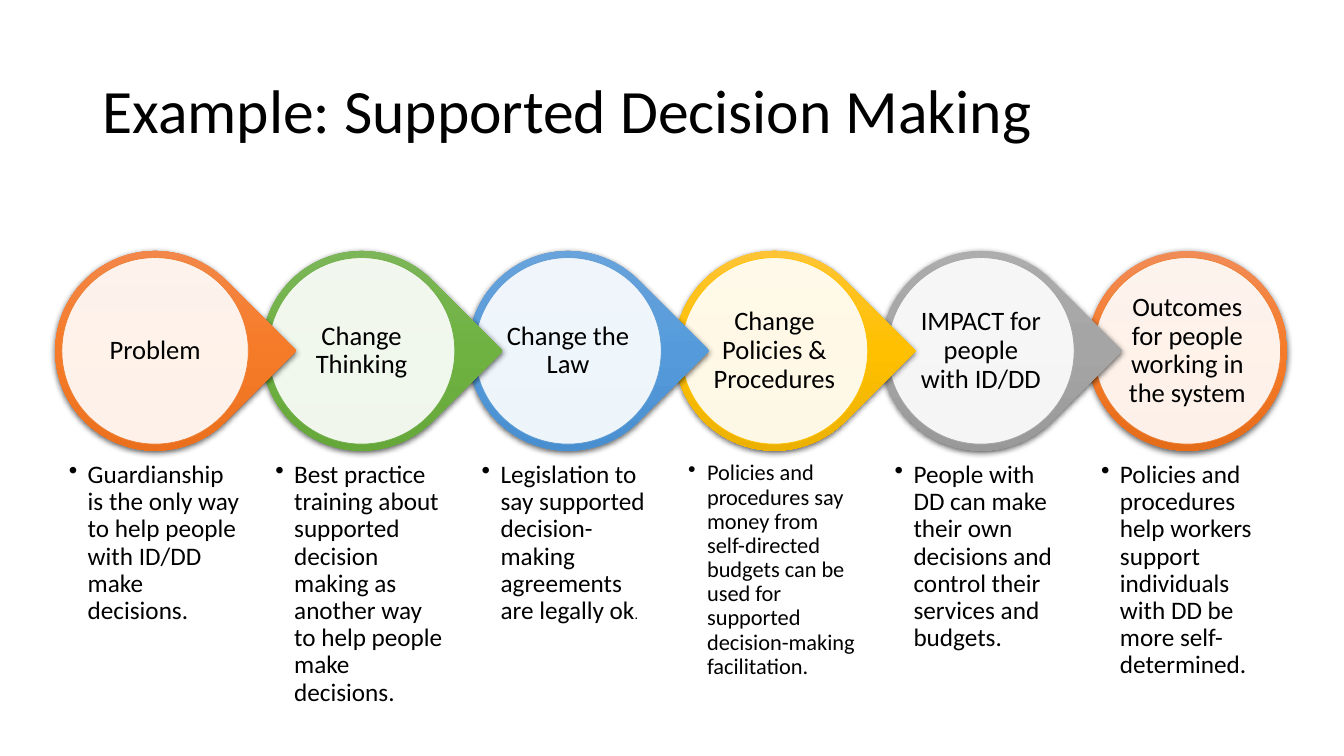
from pptx import Presentation
from pptx.dml.color import RGBColor
from pptx.enum.shapes import MSO_SHAPE
from pptx.enum.text import MSO_ANCHOR, PP_ALIGN
from pptx.oxml import parse_xml
from pptx.oxml.ns import nsdecls
from pptx.util import Pt

TITLE = "Example: Supported Decision Making"

ORANGE = ("ED7D31", ("F18C57", "F67B28", "E56C19"))
GREEN = ("70AD47", ("81B861", "6FB242", "62A336"))
BLUE = ("5B9BD5", ("71A6DB", "559BDB", "448ACA"))
GOLD = ("FFC000", ("FFC64B", "FFC000", "E3AB00"))
GRAY = ("A5A5A5", ("AFAFAF", "A5A5A5", "939393"))

# heading, colours, runs of the explanation as (text, size)
STAGES = [
    ("Problem", ORANGE,
     [("Guardianship is the only way to help people with ID/DD make decisions.", 18)]),
    ("Change Thinking", GREEN,
     [("Best practice training about supported decision making as another way "
       "to help people make decisions.", 18)]),
    ("Change the Law", BLUE,
     [("Legislation to say supported decision-making agreements are legally ok", 18),
      (".", 10)]),
    ("Change Policies & Procedures", GOLD,
     [("Policies and procedures say money from self-directed budgets can be used "
       "for supported decision-making facilitation.", 16)]),
    ("IMPACT for people with ID/DD", GRAY,
     [("People with DD can make their own decisions and control their services "
       "and budgets.", 18)]),
    ("Outcomes for people working in the system", ORANGE,
     [("Policies and procedures help workers support individuals with DD be more "
       "self-determined.", 18)]),
]

FIRST_CENTER, STEP = 110.8, 147.46
CENTER_Y = 250.6
DROP, CIRCLE = 142.6, 133.2
NOTE_TOP, NOTE_HEIGHT = 324.7, 78.5


def color(hex_string):
    return RGBColor.from_string(hex_string)


def set_frame(frame, inset, **formats):
    for side in ("left", "top", "right", "bottom"):
        setattr(frame, f"margin_{side}", Pt(inset))
    for name, value in {"word_wrap": True, **formats}.items():
        setattr(frame, name, value)


def write(paragraph, runs, align):
    paragraph.alignment = align
    paragraph.line_spacing = 0.9
    for text, size in runs:
        run = paragraph.add_run()
        run.text = text
        for name, value in {"name": "Calibri", "size": Pt(size)}.items():
            setattr(run.font, name, value)
        run.font.color.rgb = color("000000")


def add_round(kind, center, size):
    return slide.shapes.add_shape(
        kind, Pt(center - size / 2), Pt(CENTER_Y - size / 2), Pt(size), Pt(size))


def add_drop(center, shades, is_last):
    """Shaded backing whose tip points at the next stage; the last has no tip."""
    drop = add_round(MSO_SHAPE.OVAL if is_last else MSO_SHAPE.TEAR, center, DROP)
    drop.rotation = 0 if is_last else 45
    drop.line.fill.background()
    stops = "".join(
        f'<a:gs pos="{i * 50000}"><a:srgbClr val="{shade}"/></a:gs>'
        for i, shade in enumerate(shades))
    properties = drop._element.spPr
    properties.prstGeom.addnext(parse_xml(
        f'<a:gradFill {nsdecls("a")} rotWithShape="0"><a:gsLst>{stops}</a:gsLst>'
        '<a:lin ang="5400000" scaled="0"/></a:gradFill>'))
    properties.append(parse_xml(
        f'<a:effectLst {nsdecls("a")}><a:outerShdw blurRad="{Pt(4.5)}" dist="{Pt(1.5)}" '
        'dir="5400000" algn="ctr" rotWithShape="0"><a:srgbClr val="000000">'
        '<a:alpha val="63000"/></a:srgbClr></a:outerShdw></a:effectLst>'))


def add_circle(center, heading, outline):
    circle = add_round(MSO_SHAPE.OVAL, center, CIRCLE)
    circle.shadow.inherit = False
    circle.fill.solid()
    circle.fill.fore_color.rgb = color("FFFFFF")
    white = circle._element.spPr.find(".//{*}solidFill/{*}srgbClr")
    white.append(parse_xml(f'<a:alpha {nsdecls("a")} val="90000"/>'))
    circle.line.color.rgb = color(outline)
    circle.line.width = Pt(0.5)
    set_frame(circle.text_frame, 2, vertical_anchor=MSO_ANCHOR.MIDDLE)
    write(circle.text_frame.paragraphs[0], [(heading, 19)], PP_ALIGN.CENTER)


def add_note(center, runs):
    note = slide.shapes.add_textbox(
        Pt(center - CIRCLE / 2), Pt(NOTE_TOP), Pt(CIRCLE), Pt(NOTE_HEIGHT))
    set_frame(note.text_frame, 5, vertical_anchor=MSO_ANCHOR.TOP)
    paragraph = note.text_frame.paragraphs[0]
    write(paragraph, runs, PP_ALIGN.LEFT)
    properties = paragraph._p.get_or_add_pPr()
    properties.set("marL", str(Pt(13.5)))
    properties.set("indent", str(Pt(-13.5)))
    properties.append(parse_xml(f'<a:buChar {nsdecls("a")} char="•"/>'))


prs = Presentation()
prs.slide_width, prs.slide_height = Pt(960), Pt(540)
slide = prs.slides.add_slide(prs.slide_layouts[5])

title = slide.shapes.title
title.left, title.top, title.width, title.height = Pt(66), Pt(28.8), Pt(828), Pt(104.4)
set_frame(title.text_frame, 7.2, vertical_anchor=MSO_ANCHOR.MIDDLE)
write(title.text_frame.paragraphs[0], [(TITLE, 44)], PP_ALIGN.LEFT)

# Right to left, so that each tip lies over the next stage
last = len(STAGES) - 1
for position in range(last, -1, -1):
    heading, (outline, shades), explanation = STAGES[position]
    center = FIRST_CENTER + position * STEP
    add_drop(center, shades, position == last)
    add_circle(center, heading, outline)
    add_note(center, explanation)

prs.save("out.pptx")
